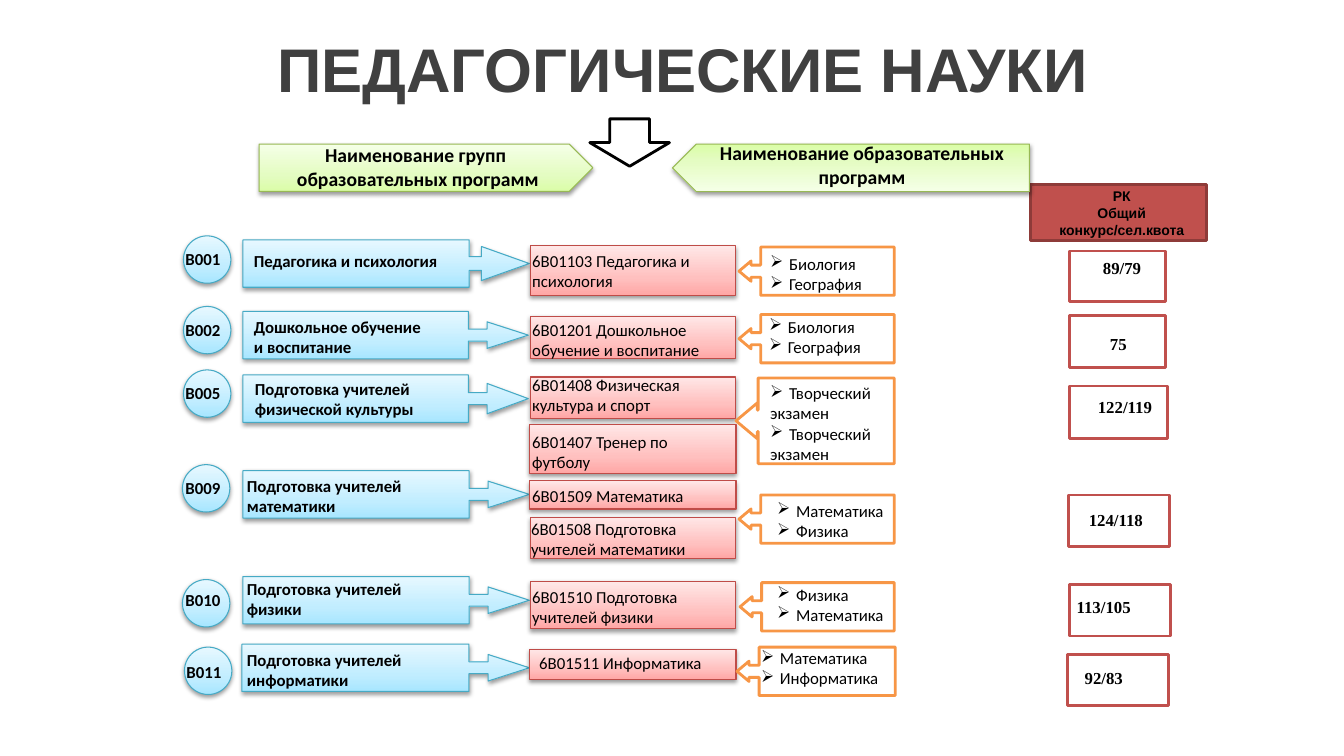
from dataclasses import dataclass

from pptx import Presentation
from pptx.dml.color import RGBColor
from pptx.enum.shapes import MSO_SHAPE
from pptx.enum.text import MSO_ANCHOR, PP_ALIGN
from pptx.oxml import parse_xml
from pptx.oxml.ns import nsdecls, qn
from pptx.util import Pt

PX = 9144  # one px is a hundredth of an inch

WHITE = RGBColor(0xFF, 0xFF, 0xFF)
BLACK = RGBColor(0x00, 0x00, 0x00)
TITLE_GREY = RGBColor(0x40, 0x40, 0x40)
BRICK = RGBColor(0xC0, 0x50, 0x4D)
DARK_BRICK = RGBColor(0x8E, 0x3B, 0x39)
ORANGE = RGBColor(0xF7, 0x96, 0x46)
GREEN_LINE = RGBColor(0x98, 0xB9, 0x55)
BLUE_LINE = RGBColor(0x46, 0xAA, 0xC5)
PINK_LINE = RGBColor(0xBF, 0x4C, 0x48)
GREENS = (RGBColor(0xDA, 0xFD, 0xA7), RGBColor(0xE4, 0xFC, 0xC2), RGBColor(0xF5, 0xFF, 0xE7))
BLUES = (RGBColor(0xA7, 0xE6, 0xFF), RGBColor(0xC1, 0xED, 0xFF), RGBColor(0xE7, 0xF8, 0xFF))
PINKS = (RGBColor(0xFF, 0xA6, 0xA5), RGBColor(0xFF, 0xC0, 0xBF), RGBColor(0xFF, 0xE7, 0xE7))


@dataclass
class Look:
    fills: tuple  # one colour, or three gradient stops with a soft shadow
    line: RGBColor
    width: float = 2


GREEN = Look(GREENS, GREEN_LINE, 0.75)
BLUE = Look(BLUES, BLUE_LINE, 0.75)
PINK = Look(PINKS, PINK_LINE, 0.75)
ORANGE_FRAME = Look((WHITE,), ORANGE)
BRICK_FRAME = Look((WHITE,), BRICK)
BRICK_BLOCK = Look((BRICK,), DARK_BRICK)
BLACK_FRAME = Look((WHITE,), BLACK)


class Painter:
    def __init__(self, page, font="Calibri", size=12, color=BLACK):
        self.page = page
        self.font, self.size, self.color = font, size, color

    def shape(self, kind, place, look, adjust=(), rotation=0):
        box = self.page.shapes.add_shape(kind, *(n * PX for n in place))
        box.rotation = rotation
        for index, value in enumerate(adjust):
            box.adjustments[index] = value
        box.line.color.rgb = look.line
        box.line.width = Pt(look.width)
        box.shadow.inherit = False
        if len(look.fills) == 1:
            box.fill.solid()
            box.fill.fore_color.rgb = look.fills[0]
        else:
            self.gradient(box, look.fills)
            self.shadow(box)

    def gradient(self, box, colors):
        box.fill.gradient()
        properties = box.element.spPr
        stops = "".join(
            f'<a:gs pos="{position}"><a:srgbClr val="{color}"/></a:gs>'
            for position, color in zip((0, 35000, 100000), colors))
        properties.replace(properties.find(qn("a:gradFill")), parse_xml(
            f'<a:gradFill {nsdecls("a")} rotWithShape="1"><a:gsLst>{stops}</a:gsLst>'
            '<a:lin ang="16200000" scaled="1"/></a:gradFill>'))

    def shadow(self, box):
        box.element.spPr.find(qn("a:effectLst")).append(parse_xml(
            f'<a:outerShdw {nsdecls("a")} blurRad="40000" dist="20000" dir="5400000" '
            'rotWithShape="0"><a:srgbClr val="000000"><a:alpha val="38000"/>'
            '</a:srgbClr></a:outerShdw>'))

    def text(self, place, lines, size=None, bold=False, font=None, color=None,
             align=PP_ALIGN.LEFT, anchor=MSO_ANCHOR.TOP):
        box = self.page.shapes.add_textbox(*(n * PX for n in place))
        frame = box.text_frame
        frame.word_wrap = True
        frame.vertical_anchor = anchor
        for index, line in enumerate(lines):
            para = frame.paragraphs[0] if index == 0 else frame.add_paragraph()
            para.alignment = align
            if line.startswith(BULLET):
                self.bullet(para)
            span = para.add_run()
            span.text = line.removeprefix(BULLET)
            span.font.name = font or self.font
            span.font.size = Pt(size or self.size)
            span.font.bold = bold
            span.font.color.rgb = color or self.color

    def bullet(self, para):
        properties = para._p.get_or_add_pPr()
        properties.set("marL", "171450")
        properties.set("indent", "-171450")
        properties.append(parse_xml(f'<a:buChar {nsdecls("a")} char="{BULLET}"/>'))


BULLET = "➢"

# Code, circle (left, top), code text (left, top)
CODES = [
    ("B001", (182, 234), (174, 242)),
    ("B002", (182, 304), (174, 312)),
    ("B005", (182, 367), (174, 375)),
    ("B009", (181, 461), (174, 469)),
    ("B010", (181, 575), (174, 580)),
    ("B011", (183, 642), (175, 652)),
]
# Lines, arrow callout (left, top, width), its adjustments, text (left, top)
GROUPS = [
    (["Педагогика и психология"], (241, 238, 284), (0.29, 0.36, 1.01, 0.79), (242, 244)),
    (["Дошкольное обучение", "и воспитание"], (241, 309, 283), (0.25, 0.28, 0.87, 0.79), (242, 309)),
    (["Подготовка учителей", "физической культуры"], (241, 372, 283), (0.25, 0.32, 0.87, 0.79), (243, 371)),
    (["Подготовка учителей", "математики"], (241, 467, 284), (0.25, 0.28, 0.87, 0.79), (235, 467)),
    (["Подготовка учителей", "физики"], (241, 572, 284), (0.25, 0.28, 0.87, 0.79), (235, 569)),
    (["Подготовка учителей", "информатики"], (240, 639, 285), (0.25, 0.28, 0.87, 0.79), (235, 640)),
]
# Lines, box (left, top, width, height), text (left, top)
PROGRAMS = [
    (["6В01103 Педагогика и", "психология"], (526, 244, 204, 49), (518, 244)),
    (["6В01201 Дошкольное", "обучение и воспитание"], (526, 314, 204, 42), (518, 312)),
    (["6В01408 Физическая", "культура и спорт"], (526, 374, 204, 41), (518, 367)),
    (["6В01407 Тренер по", "футболу"], (525, 421, 205, 49), (518, 423)),
    (["6В01509 Математика"], (525, 477, 205, 28), (518, 477)),
    (["6В01508 Подготовка", "учителей математики"], (526, 513, 204, 41), (517, 510)),
    (["6В01510 Подготовка", "учителей физики"], (526, 577, 204, 47), (518, 577)),
    (["6В01511 Информатика"], (525, 644, 205, 30), (525, 643)),
]
# Lines, arrow callout (left, top, width, height), text (left, top)
SUBJECTS = [
    (["➢Биология", "➢География"], (733, 245, 154, 48), (754, 247)),
    (["➢Биология", "➢География"], (733, 312, 154, 48), (753, 309)),
    (["➢Творческий", "экзамен", "➢Творческий", "экзамен"], (730, 375, 157, 85), (754, 375)),
    (["➢Математика", "➢Физика"], (733, 491, 154, 48), (761, 492)),
    (["➢Физика", "➢Математика"], (734, 578, 153, 48), (761, 575)),
    (["➢Математика", "➢Информатика"], (731, 642, 157, 48), (745, 638)),
]
# Score, frame (left, top, width, height), text (left, top)
SCORES = [
    ("89/79", (1061, 249, 95, 50), (1084, 251)),
    ("75", (1061, 313, 95, 52), (1091, 326)),
    ("122/119", (1061, 383, 97, 52), (1079, 389)),
    ("124/118", (1060, 491, 100, 51), (1070, 501)),
    ("113/105", (1061, 580, 100, 51), (1058, 587)),
    ("92/83", (1059, 649, 100, 51), (1066, 658)),
]


def main():
    deck = Presentation()
    deck.slide_width, deck.slide_height = 1333 * PX, 750 * PX
    painter = Painter(deck.slides.add_slide(deck.slide_layouts[6]))

    # Title and column headings
    painter.text((169, 9, 1000, 117), [" ПЕДАГОГИЧЕСКИЕ НАУКИ"], 44, True, "Arial",
                 TITLE_GREY, PP_ALIGN.CENTER, MSO_ANCHOR.MIDDLE)
    painter.shape(MSO_SHAPE.RECTANGLE, (1022, 183, 175, 56), BRICK_BLOCK)
    painter.shape(MSO_SHAPE.DOWN_ARROW, (585, 118, 79, 47), BLACK_FRAME)
    painter.shape(MSO_SHAPE.PENTAGON, (257, 143, 331, 47), GREEN)
    painter.shape(MSO_SHAPE.PENTAGON, (667, 143, 354, 47), GREEN, rotation=180)
    painter.text((265, 137, 299, 57), ["Наименование групп ", "образовательных программ"],
                 14, True, align=PP_ALIGN.CENTER)
    painter.text((682, 135, 346, 57), ["Наименование образовательных программ"],
                 14, True, align=PP_ALIGN.CENTER)
    painter.text((979, 181, 267, 61), ["РК", "Общий", "конкурс/сел.квота"],
                 10, True, "Arial", align=PP_ALIGN.CENTER)

    # Program groups, pointing right
    for lines, callout, adjust, corner in GROUPS:
        painter.shape(MSO_SHAPE.RIGHT_ARROW_CALLOUT, (*callout, 47), BLUE, adjust)
        painter.text((*corner, 274, 50), lines, bold=True)

    # Educational programs
    for lines, place, corner in PROGRAMS:
        painter.shape(MSO_SHAPE.RECTANGLE, place, PINK)
        painter.text((*corner, 220, 50), lines)

    # Group codes
    for code, circle, corner in CODES:
        painter.shape(MSO_SHAPE.OVAL, (*circle, 47, 47), BLUE)
        painter.text((*corner, 71, 30), [code], bold=True)

    # Exam subjects, pointing left
    for lines, place, corner in SUBJECTS:
        painter.shape(MSO_SHAPE.LEFT_ARROW_CALLOUT, place, ORANGE_FRAME, (0.25, 0.21, 0.25, 0.86))
        painter.text((*corner, 173, 10 + 20 * len(lines)), lines)

    # Passing scores
    for score, place, corner in SCORES:
        painter.shape(MSO_SHAPE.RECTANGLE, place, BRICK_FRAME)
        painter.text((*corner, 79, 30), [score], bold=True, font="Times New Roman")

    deck.save("out.pptx")


if __name__ == "__main__":
    main()
